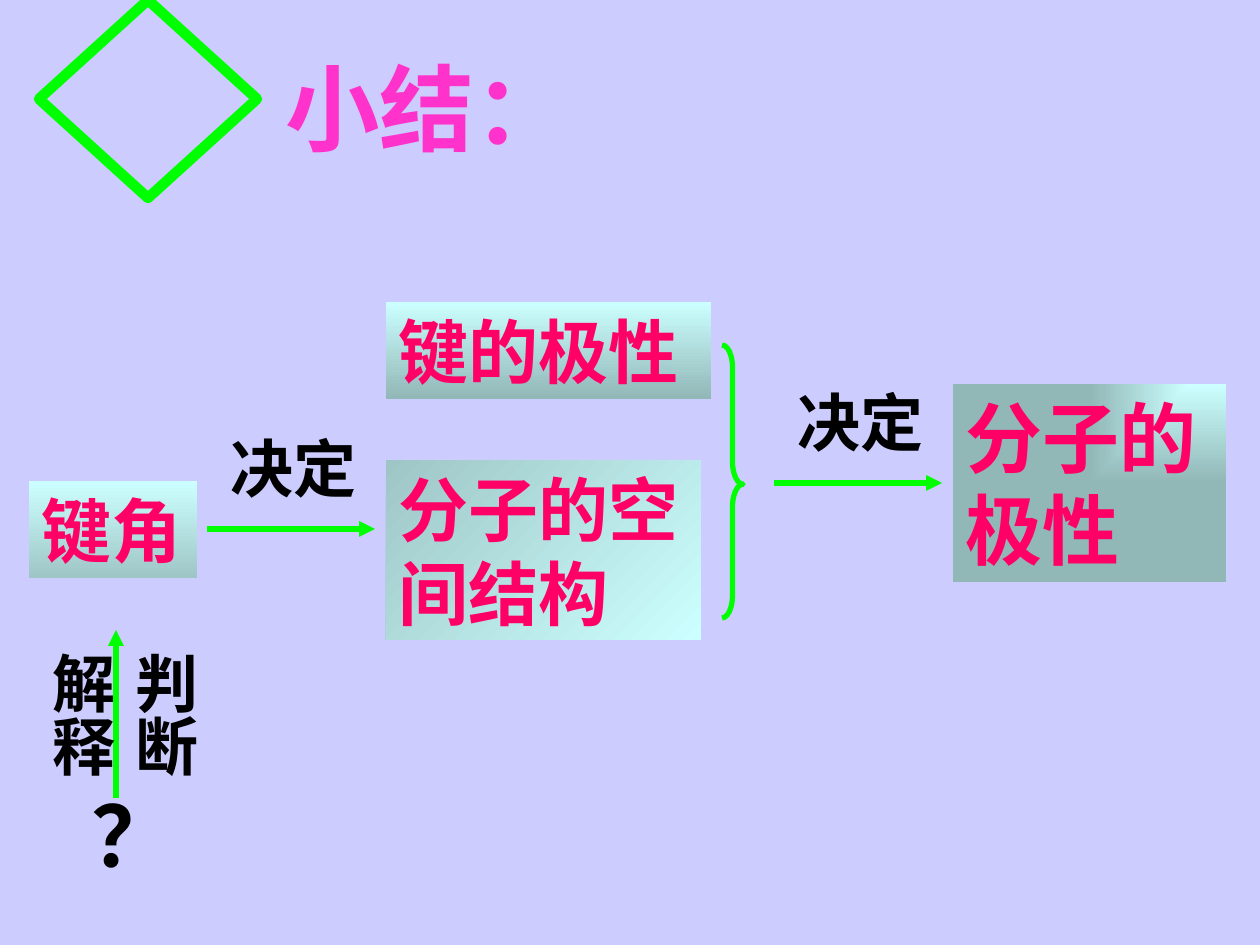
from dataclasses import dataclass
from typing import Optional

from lxml import etree
from pptx import Presentation
from pptx.dml.color import RGBColor
from pptx.enum.shapes import MSO_CONNECTOR, MSO_SHAPE
from pptx.enum.text import MSO_ANCHOR, MSO_AUTO_SIZE, PP_ALIGN
from pptx.oxml import parse_xml
from pptx.oxml.ns import qn
from pptx.util import Emu, Pt

RECT, BRACE, DIAMOND = MSO_SHAPE.RECTANGLE, MSO_SHAPE.RIGHT_BRACE, MSO_SHAPE.DIAMOND
STRAIGHT = MSO_CONNECTOR.STRAIGHT
TOP, LEFT = MSO_ANCHOR.TOP, PP_ALIGN.LEFT
GROW = MSO_AUTO_SIZE.SHAPE_TO_FIT_TEXT

LAVENDER = RGBColor(0xCC, 0xCC, 0xFF)
GREEN = RGBColor(0x00, 0xFF, 0x00)
ROSE = RGBColor(0xFF, 0x00, 0x66)
PINK = RGBColor(0xFF, 0x33, 0xCC)
BLACK = RGBColor(0x00, 0x00, 0x00)
CYAN = RGBColor(0xCC, 0xFF, 0xFF)

PX_PER_INCH = 126
A_NS = "http://schemas.openxmlformats.org/drawingml/2006/main"


def px(n: int) -> Emu:
    return Emu(round(n * 914400 / PX_PER_INCH))


@dataclass
class Box:
    """A concept on a gradient from pale cyan to a shade of it."""
    text: str
    x: int
    y: int
    w: int
    h: int
    size: int
    shade: float                   # percent of the pale colour kept
    angle: Optional[int] = 90      # None: spreads from the top right corner
    dark_first: bool = False


@dataclass
class Label:
    text: str
    x: int
    y: int
    w: int
    h: int
    size: int
    color: RGBColor = BLACK
    font: str = "Arial"
    wrap: bool = True
    vertical: bool = False
    space_before: bool = True


def write_text(sp, text: str, size: int, color: RGBColor, font: str = "Arial",
               wrap: bool = True, space_before: bool = True) -> None:
    tf = sp.text_frame
    tf.word_wrap = wrap
    tf.auto_size = GROW
    tf.vertical_anchor = TOP
    p = tf.paragraphs[0]
    p.alignment = LEFT
    if space_before:
        before = etree.SubElement(p._p.get_or_add_pPr(), qn("a:spcBef"))
        etree.SubElement(before, qn("a:spcPct"), val="50000")
    r = p.add_run()
    r.text = text
    r.font.name, r.font.size, r.font.bold = font, Pt(size), True
    r.font.color.rgb = color


def set_gradient(sp, box: Box) -> None:
    pale = f'<a:srgbClr val="{CYAN}"/>'
    dark = f'<a:srgbClr val="{CYAN}"><a:shade val="{round(box.shade * 1000)}"/></a:srgbClr>'
    first, last = (dark, pale) if box.dark_first else (pale, dark)
    if box.angle is None:
        course = '<a:path path="rect"><a:fillToRect l="100000" b="100000"/></a:path>'
    else:
        course = f'<a:lin ang="{box.angle * 60000}" scaled="1"/>'
    fill = parse_xml(
        f'<a:gradFill xmlns:a="{A_NS}" rotWithShape="1"><a:gsLst>'
        f'<a:gs pos="0">{first}</a:gs><a:gs pos="100000">{last}</a:gs>'
        f'</a:gsLst>{course}</a:gradFill>')
    sp._element.spPr.find(qn("a:prstGeom")).addnext(fill)


def add_box(shapes, box: Box) -> None:
    sp = shapes.add_shape(RECT, px(box.x), px(box.y), px(box.w), px(box.h))
    sp.shadow.inherit = False
    sp.line.fill.background()
    set_gradient(sp, box)
    write_text(sp, box.text, box.size, ROSE)


def add_label(shapes, label: Label) -> None:
    sp = shapes.add_textbox(px(label.x), px(label.y), px(label.w), px(label.h))
    write_text(sp, label.text, label.size, label.color, label.font,
               label.wrap, label.space_before)
    if label.vertical:
        sp.text_frame._txBody.bodyPr.set("vert", "eaVert")


def add_outline(shapes, kind, x: int, y: int, w: int, h: int, width: int):
    sp = shapes.add_shape(kind, px(x), px(y), px(w), px(h))
    sp.shadow.inherit = False
    sp.fill.background()
    sp.line.color.rgb, sp.line.width = GREEN, Pt(width)
    return sp


def add_arrow(shapes, x1: int, y1: int, x2: int, y2: int) -> None:
    s = shapes.add_connector(STRAIGHT, px(x1), px(y1), px(x2), px(y2))
    s.line.color.rgb, s.line.width = GREEN, Pt(3)
    etree.SubElement(s.line._get_or_add_ln(), qn("a:tailEnd"), type="triangle")
    etree.SubElement(s._element.spPr, qn("a:effectLst"))


def add_decides(shapes, x: int, y: int) -> None:
    """A rightward arrow starting at x, y with its caption above."""
    group = shapes.add_group_shape().shapes
    add_arrow(group, x, y, x + 168, y)
    add_label(group, Label("决定", x + 11, y - 106, 199, 88, 36))


def main() -> None:
    prs = Presentation()
    prs.slide_width, prs.slide_height = px(1260), px(945)
    s = prs.slides.add_slide(prs.slide_layouts[6])
    s.background.fill.solid()
    s.background.fill.fore_color.rgb = LAVENDER
    shapes = s.shapes

    # Chain of concepts
    add_box(shapes, Box("分子的极性", 953, 384, 273, 198, 44, 47, angle=None))
    add_box(shapes, Box("分子的空间结构", 386, 460, 315, 180, 40, 56.5, 45, True))
    add_box(shapes, Box("键角", 29, 481, 168, 97, 40, 56.5))
    add_decides(shapes, 207, 529)
    add_box(shapes, Box("键的极性", 386, 302, 325, 97, 40, 47))
    brace = add_outline(shapes, BRACE, 722, 345, 21, 273, 3)
    brace.adjustments[0], brace.adjustments[1] = 1.08, 0.51
    add_decides(shapes, 774, 483)

    # Heading
    add_outline(shapes, DIAMOND, 39, 0, 218, 198, 6)
    add_label(shapes, Label("小结：", 273, 44, 318, 126, 54, PINK))

    # Question leading up to the bond angle
    group = shapes.add_group_shape().shapes
    add_arrow(group, 116, 798, 116, 630)
    add_label(group, Label("？", 79, 777, 110, 113, 48, font="Cabin",
                           wrap=False, space_before=False))
    for text, x in (("判断", 108), ("解释", 25)):
        add_label(group, Label(text, x, 640, 101, 141, 36, font="Cabin", wrap=False,
                               vertical=True, space_before=False))

    prs.save("out.pptx")


if __name__ == "__main__":
    main()
